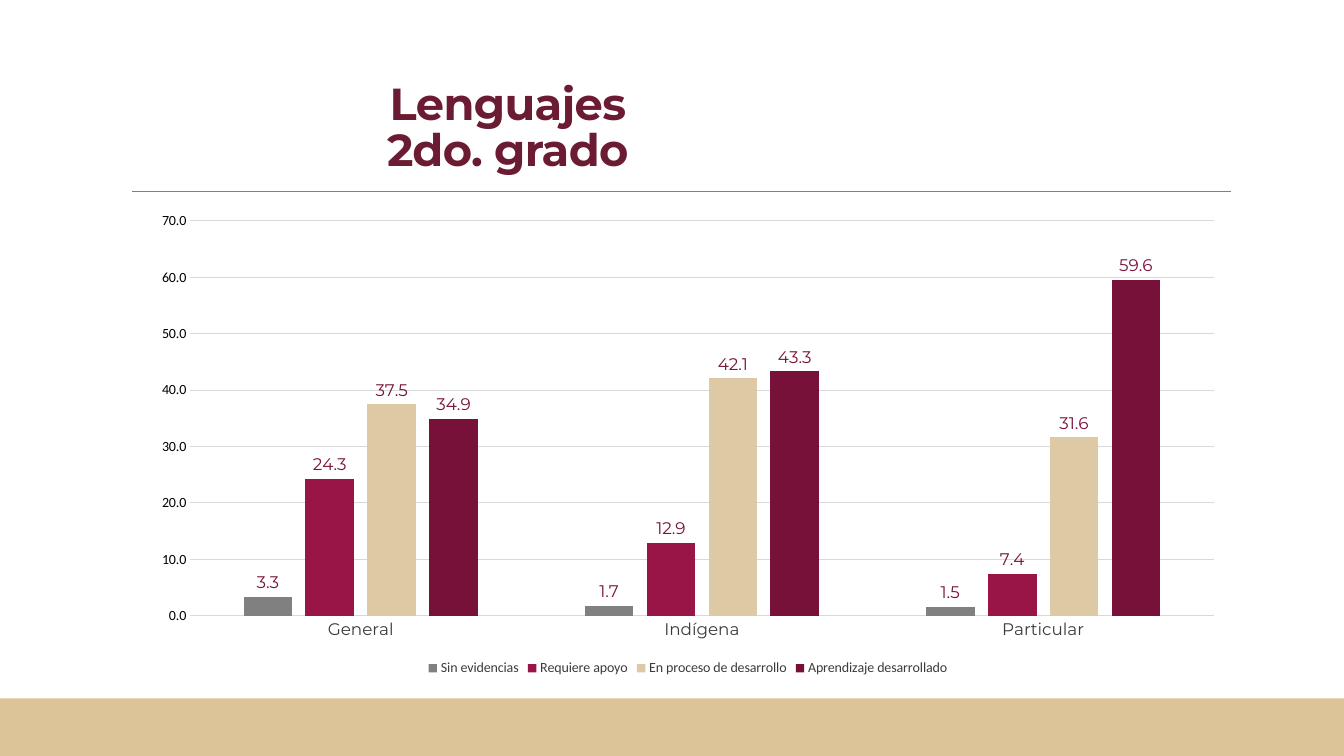
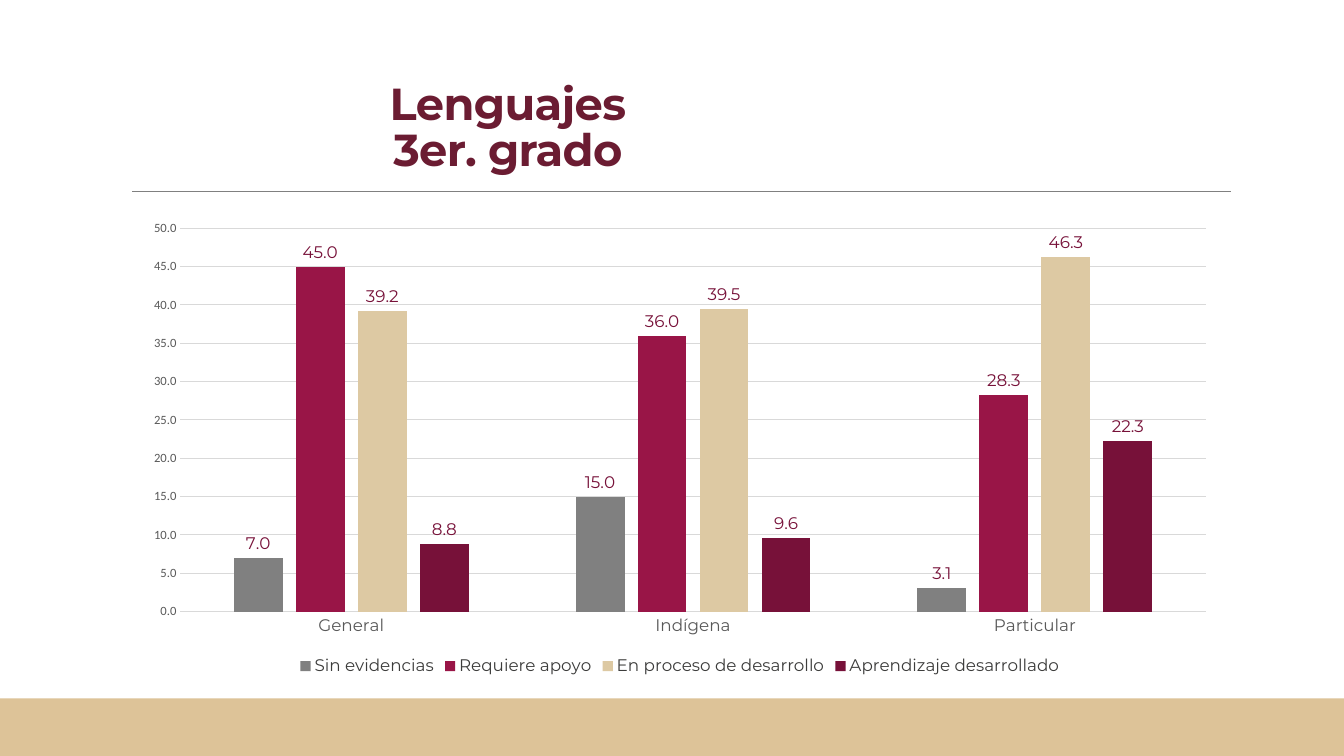
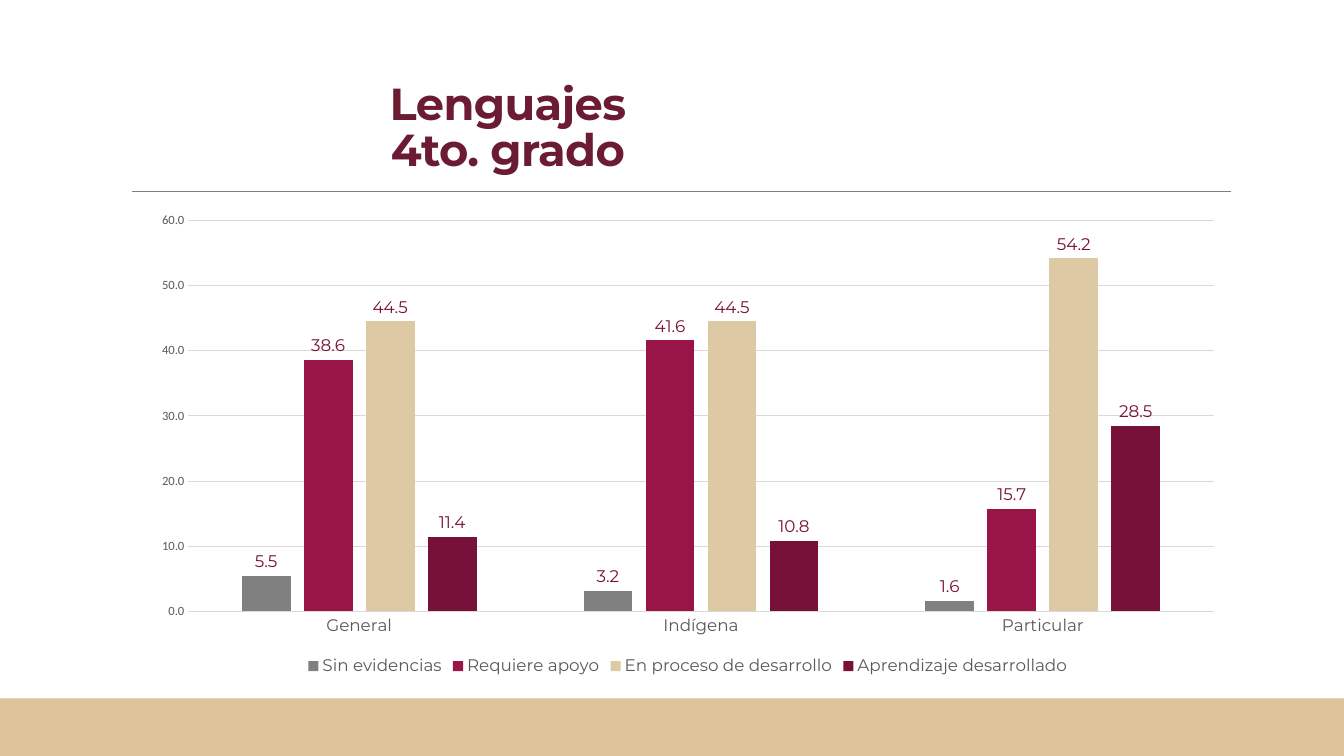
"""Build the Lenguajes result slides, one column chart per school grade."""
from dataclasses import dataclass

from lxml.etree import SubElement
from pptx import Presentation
from pptx.chart.data import CategoryChartData
from pptx.dml.color import RGBColor
from pptx.enum.chart import XL_CHART_TYPE as ChartType
from pptx.enum.chart import XL_LABEL_POSITION as LabelPosition
from pptx.enum.chart import XL_LEGEND_POSITION as LegendPosition
from pptx.enum.chart import XL_TICK_MARK as TickMark
from pptx.enum.shapes import MSO_CONNECTOR as Connector
from pptx.enum.shapes import MSO_SHAPE as Shape
from pptx.enum.text import MSO_ANCHOR as Anchor
from pptx.enum.text import MSO_AUTO_SIZE as AutoSize
from pptx.enum.text import PP_ALIGN as Align
from pptx.oxml.ns import qn
from pptx.util import Cm, Pt


@dataclass(frozen=True)
class Theme:
    display: str = "Montserrat"
    text: str = "Calibri"
    title: str = "6B1C32"
    band: str = "DDC398"
    rule: str = "808080"
    grid: str = "D9D9D9"
    label: str = "771139"
    black: str = "000000"
    dark: str = "3C3C3B"
    gray: str = "595959"
    levels: tuple = ("808080", "991547", "DDC9A3", "771139")
    title_size: int = 32
    label_size: int = 12
    small_size: int = 10
    tiny_size: int = 9


THEME = Theme()


@dataclass(frozen=True)
class Grade:
    name: str
    results: tuple
    axis_max: int
    axis_step: int
    box: tuple
    category_color: str
    value_style: tuple
    legend_style: tuple


SCHOOL_TYPES = ("General", "Indígena", "Particular")
LEVELS = ("Sin evidencias", "Requiere apoyo",
          "En proceso de desarrollo", "Aprendizaje desarrollado")
WIDE_BOX = (3.53, 5.13, 27.61, 12.01)
GRAY_AXIS = (THEME.text, THEME.tiny_size, THEME.gray)

GRADES = (
    Grade("2do. grado",
          ((3.3, 1.7, 1.5), (24.3, 12.9, 7.4), (37.5, 42.1, 31.6), (34.9, 43.3, 59.6)),
          70, 10, WIDE_BOX, THEME.dark,
          (THEME.text, THEME.small_size, THEME.black),
          (THEME.text, THEME.small_size, THEME.dark)),
    Grade("3er. grado",
          ((7, 15, 3.1), (45, 36, 28.3), (39.2, 39.5, 46.3), (8.8, 9.6, 22.3)),
          50, 5, (3.33, 5.33, 27.61, 11.81), THEME.gray, GRAY_AXIS,
          (THEME.display, THEME.label_size, THEME.dark)),
    Grade("4to. grado",
          ((5.5, 3.2, 1.6), (38.6, 41.6, 15.7), (44.5, 44.5, 54.2), (11.4, 10.8, 28.5)),
          60, 10, WIDE_BOX, THEME.gray, GRAY_AXIS,
          (THEME.display, THEME.label_size, THEME.gray)),
)


def style_font(font, name, size, color, bold=False):
    """Set the face, size, colour and weight of a font."""
    font.name, font.size, font.bold = name, Pt(size), bold
    font.color.rgb = RGBColor.from_string(color)


def style_line(line, color, width):
    """Give a line a solid colour and a width in points."""
    line.color.rgb = RGBColor.from_string(color)
    line.width = Pt(width)


def prepare_layout(layout):
    """Keep only the title placeholder and move it to its place."""
    title = layout.placeholders[0]
    for spare in list(layout.placeholders)[1:]:
        spare.element.getparent().remove(spare.element)
    title.left, title.top, title.width, title.height = map(Cm, (2.54, 1.93, 20.52, 2.69))
    title.text_frame.vertical_anchor = Anchor.MIDDLE


def decorate_layout(layout, slide):
    """Draw the band and the title rule and hand them to the layout."""
    band = slide.shapes.add_shape(Shape.RECTANGLE, 0, Cm(17.6), Cm(33.87), Cm(1.45))
    band.shadow.inherit = False
    band.fill.solid()
    band.fill.fore_color.rgb = RGBColor.from_string(THEME.band)
    band.line.fill.background()
    rule = slide.shapes.add_connector(
        Connector.STRAIGHT, Cm(3.33), Cm(4.83), Cm(31.01), Cm(4.83))
    style_line(rule.line, THEME.rule, 0.5)
    SubElement(rule.element.spPr, qn("a:effectLst"))
    for part in (band, rule):
        layout.shapes.element.append(part.element)


def add_title(slide, grade):
    """Write the subject and the grade on two lines of the title."""
    frame = slide.shapes.title.text_frame
    frame.text = f"Lenguajes\v{grade.name}"
    frame.auto_size = AutoSize.NONE
    heading = frame.paragraphs[0]
    heading.alignment, heading.line_spacing = Align.CENTER, 0.85
    for run in heading.runs:
        style_font(run.font, THEME.display, THEME.title_size, THEME.title, True)
        run.font._element.set("spc", "-50")


def style_axes(chart, grade):
    """Format the category axis, the value axis and its gridlines."""
    schools, percent = chart.category_axis, chart.value_axis
    for axis in (schools, percent):
        axis.major_tick_mark = axis.minor_tick_mark = TickMark.NONE
    style_font(schools.tick_labels.font, THEME.display, THEME.label_size, grade.category_color)
    style_line(schools.format.line, THEME.grid, 0.75)
    style_font(percent.tick_labels.font, *grade.value_style)
    percent.tick_labels.number_format = "0.0"
    percent.tick_labels.number_format_is_linked = False
    percent.minimum_scale, percent.maximum_scale = 0, grade.axis_max
    percent.major_unit = grade.axis_step
    percent.format.line.fill.background()
    style_line(percent.major_gridlines.format.line, THEME.grid, 0.75)


def style_level(level, color):
    """Colour the columns of one level and label their values."""
    level.format.fill.solid()
    level.format.fill.fore_color.rgb = RGBColor.from_string(color)
    labels = level.data_labels
    labels.show_value = True
    labels.position = LabelPosition.OUTSIDE_END
    labels.number_format, labels.number_format_is_linked = "0.0", False
    style_font(labels.font, THEME.display, THEME.label_size, THEME.label)


def add_results_chart(slide, grade):
    """Add the clustered columns with the results of one grade."""
    data = CategoryChartData(number_format="0.0")
    data.categories = SCHOOL_TYPES
    for level, values in zip(LEVELS, grade.results):
        data.add_series(level, values)
    chart = slide.shapes.add_chart(
        ChartType.COLUMN_CLUSTERED, *map(Cm, grade.box), data).chart
    chart.has_title = False
    style_font(chart.font, THEME.text, THEME.small_size, THEME.black)
    style_axes(chart, grade)
    columns = chart.plots[0]
    columns.gap_width, columns.overlap = 219, -27
    columns.vary_by_categories = False
    for level, color in zip(columns.series, THEME.levels):
        style_level(level, color)
    chart.has_legend = True
    chart.legend.position = LegendPosition.BOTTOM
    chart.legend.include_in_layout = False
    style_font(chart.legend.font, *grade.legend_style)


def main():
    """Build and save the presentation."""
    deck = Presentation()
    deck.slide_width, deck.slide_height = Cm(33.87), Cm(19.05)
    layout = deck.slide_layouts.get_by_name("Title Only")
    prepare_layout(layout)
    slides = [deck.slides.add_slide(layout) for _ in GRADES]
    decorate_layout(layout, slides[0])
    for slide, grade in zip(slides, GRADES):
        add_title(slide, grade)
        add_results_chart(slide, grade)
    deck.save("out.pptx")


if __name__ == "__main__":
    main()
